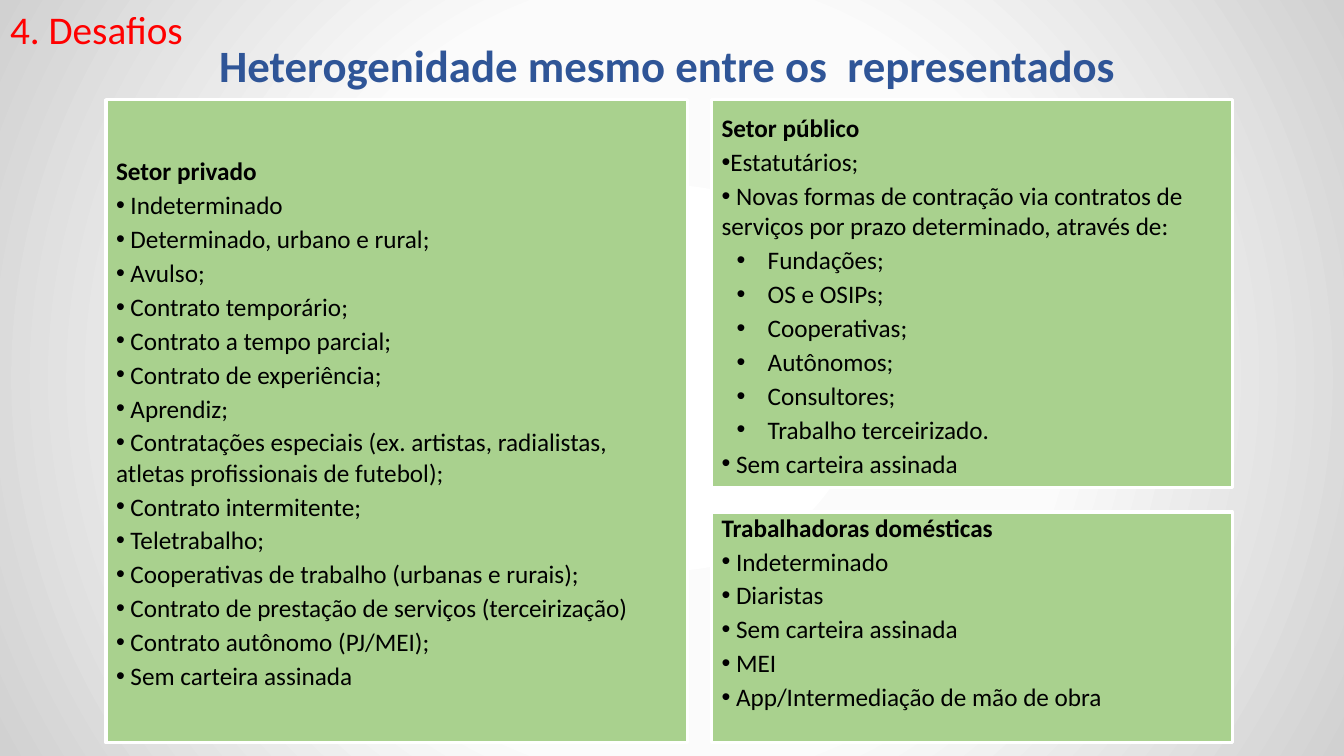
from dataclasses import dataclass

from pptx import Presentation
from pptx.dml.color import RGBColor
from pptx.enum.text import MSO_ANCHOR, MSO_AUTO_SIZE, PP_ALIGN
from pptx.oxml import parse_xml
from pptx.oxml.ns import nsdecls, qn
from pptx.util import Cm, Pt

TOP, MIDDLE = MSO_ANCHOR.TOP, MSO_ANCHOR.MIDDLE
LEFT, CENTER = PP_ALIGN.LEFT, PP_ALIGN.CENTER
NO_AUTOFIT = MSO_AUTO_SIZE.NONE


@dataclass(frozen=True)
class Theme:
    """Colours, font and type sizes of the slide."""
    font: str = "Calibri"
    panel: str = "A9D18E"
    border: str = "FFFFFF"
    text: str = "000000"
    heading: str = "2F5597"
    section: str = "FF0000"
    backdrop: tuple = ((0, "FFFFFF"), (50, "FBFBFB"), (100, "D1D1D1"))
    heading_size: float = 32
    section_size: float = 28
    list_size: float = 18
    list_gap: float = 2.6
    border_width: float = 2.25


THEME = Theme()

PRIVATE = (
    "Setor privado",
    [" Indeterminado", " Determinado, urbano e rural;", " Avulso;",
     " Contrato temporário;", " Contrato a tempo parcial;",
     " Contrato de experiência;", " Aprendiz;",
     " Contratações especiais (ex. artistas, radialistas, "
     "atletas profissionais de futebol);",
     " Contrato intermitente;", " Teletrabalho;",
     " Cooperativas de trabalho (urbanas e rurais);",
     " Contrato de prestação de serviços (terceirização)",
     " Contrato autônomo (PJ/MEI);", " Sem carteira assinada"],
)
PUBLIC = (
    "Setor público",
    ["Estatutários;",
     " Novas formas de contração via contratos de serviços "
     "por prazo determinado, através de:",
     [" Fundações;", " OS e OSIPs;", " Cooperativas;", " Autônomos;",
      " Consultores;", " Trabalho terceirizado."],
     " Sem carteira assinada"],
)
DOMESTIC = (
    "Trabalhadoras domésticas",
    [" Indeterminado", " Diaristas", " Sem carteira assinada", " MEI",
     " App/Intermediação de mão de obra"],
)


def paint_backdrop(slide):
    """Fill the slide with a circular gradient."""
    slide.background.fill.solid()
    stops = "".join(
        f'<a:gs pos="{position * 1000}"><a:srgbClr val="{colour}"/></a:gs>'
        for position, colour in THEME.backdrop)
    gradient = parse_xml(
        f'<a:gradFill {nsdecls("a")} rotWithShape="1"><a:gsLst>{stops}</a:gsLst>'
        '<a:path path="circle"><a:fillToRect l="50000" t="50000" r="50000" '
        'b="50000"/></a:path></a:gradFill>')
    properties = slide.element.find(".//" + qn("p:bgPr"))
    properties.replace(properties.find(qn("a:solidFill")), gradient)


def place(holder, left, top, width, height, anchor):
    """Move a placeholder and set up its text frame."""
    holder.left, holder.top = Cm(left), Cm(top)
    holder.width, holder.height = Cm(width), Cm(height)
    frame = holder.text_frame
    frame.word_wrap = True
    frame.auto_size = NO_AUTOFIT
    frame.vertical_anchor = anchor
    return frame


def format_paragraph(paragraph, size, colour, bold=False, align=LEFT):
    """Format a paragraph and its runs."""
    paragraph.alignment = align
    for run in paragraph.runs:
        run.font.name = THEME.font
        run.font.size = Pt(size)
        run.font.bold = bold
        run.font.color.rgb = RGBColor.from_string(colour)


def set_bullet(paragraph, bulleted, indent=0, hanging=0):
    """Set the bullet and indents of a paragraph."""
    properties = paragraph._p.get_or_add_pPr()
    properties.set("marL", str(Cm(indent)))
    properties.set("indent", str(-Cm(hanging)))
    tag = 'buChar char="•"' if bulleted else "buNone"
    if bulleted:
        properties.append(parse_xml(
            f'<a:buFont {nsdecls("a")} typeface="Arial"/>'))
    properties.append(parse_xml(f'<a:{tag} {nsdecls("a")}/>'))


def add_label(holder, text, box, size, colour, bold=False, align=LEFT):
    """Write one line of text into a placeholder."""
    frame = place(holder, *box, MIDDLE)
    frame.text = text
    set_bullet(frame.paragraphs[0], False)
    format_paragraph(frame.paragraphs[0], size, colour, bold, align)
    frame.paragraphs[0].space_before = Pt(0)


def add_item(frame, text, indent=0, hanging=0):
    """Append one bulleted item."""
    item = frame.add_paragraph()
    item.text = text
    set_bullet(item, True, indent, hanging)
    format_paragraph(item, THEME.list_size, THEME.text)
    item.space_before = Pt(THEME.list_gap)


def add_panel(holder, content, box, anchor=MIDDLE, inset=0.22):
    """Fill a panel with a bold heading and its list."""
    heading, items = content
    add_label(holder, heading, box, THEME.list_size, THEME.text, bold=True)
    holder.fill.solid()
    holder.fill.fore_color.rgb = RGBColor.from_string(THEME.panel)
    holder.line.color.rgb = RGBColor.from_string(THEME.border)
    holder.line.width = Pt(THEME.border_width)
    frame = holder.text_frame
    frame.vertical_anchor = anchor
    frame.margin_top = Cm(inset)
    for item in items:
        if isinstance(item, list):
            for detail in item:
                add_item(frame, detail, indent=1.02, hanging=0.64)
        else:
            add_item(frame, item)


def main():
    """Build the slide and save it."""
    deck = Presentation()
    deck.slide_width, deck.slide_height = Cm(33.87), Cm(19.05)
    comparison = deck.slide_layouts.get_by_name("Comparison")
    slide = deck.slides.add_slide(comparison)
    paint_backdrop(slide)

    section, private, public, domestic = list(slide.placeholders)[1:5]
    add_label(slide.shapes.title,
              "Heterogenidade mesmo entre os  representados ",
              (2.29, 0.81, 29.31, 1.63), THEME.heading_size, THEME.heading,
              bold=True, align=CENTER)
    add_label(section, "4. Desafios", (0, 0, 5.11, 1.45),
              THEME.section_size, THEME.section)

    add_panel(private, PRIVATE, (2.67, 2.51, 14.66, 16.21))
    add_panel(public, PUBLIC, (17.93, 2.51, 13.13, 9.78))
    add_panel(domestic, DOMESTIC, (17.93, 12.9, 13.13, 5.82), TOP, 0)

    deck.save("out.pptx")


if __name__ == "__main__":
    main()
